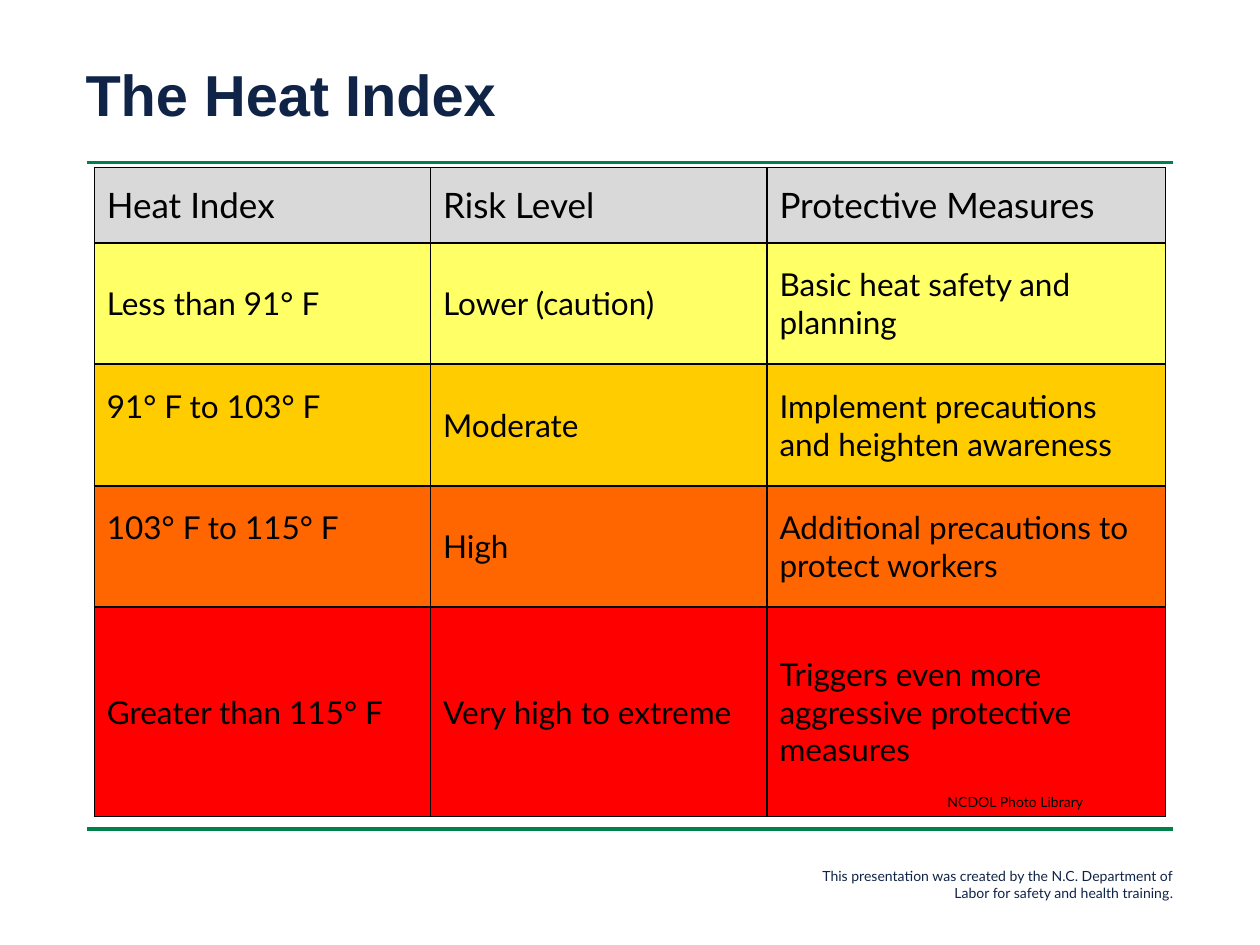
from dataclasses import dataclass

import pptx
import pptx.dml.color
import pptx.enum.shapes
import pptx.enum.text
import pptx.oxml
import pptx.oxml.ns
import pptx.util
from pptx.util import Cm


@dataclass(frozen=True)
class Theme:
    title_font: str = "Arial"
    body_font: str = "Lato"
    navy: str = "102447"
    purple: str = "2B0E62"
    green: str = "00814A"
    black: str = "000000"
    title_size: int = 33
    header_size: int = 20
    cell_size: int = 18
    note_size: int = 8


THEME = Theme()
ALIGN = pptx.enum.text.PP_ALIGN
MIDDLE = pptx.enum.text.MSO_ANCHOR.MIDDLE

COLUMN_WIDTHS = (6.78, 6.78, 8.04)
# Row height, fill colour, cell texts (a line break starts a paragraph)
ROWS = (
    (1.52, "D9D9D9", ("Heat Index", "Risk Level", "Protective Measures")),
    (2.44, "FFFF66", ("Less than 91° F", "Lower (caution)",
                      "Basic heat safety and planning")),
    (2.46, "FFCC00", ("91° F to 103° F", "Moderate",
                      "Implement precautions and heighten awareness")),
    (2.44, "FF6600", ("103° F to 115° F", "High",
                      "Additional precautions to\nprotect workers")),
    (4.22, "FF0000", ("Greater than 115° F", "Very high to extreme",
                      "Triggers even more aggressive protective\nmeasures")),
)
RAISED_CELLS = {(2, 0), (3, 0)}  # text sits one line above the others


def rgb(color):
    return pptx.dml.color.RGBColor.from_string(color)


def add_run(p, text, size, color=THEME.black, font=THEME.body_font, bold=False):
    r = p.add_run()
    r.text = text
    r.font.name = font
    r.font.size = pptx.util.Pt(size)
    r.font.bold = bold
    r.font.color.rgb = rgb(color)


def add_title(s, text):
    sp = s.shapes.title
    sp.left, sp.top, sp.width, sp.height = Cm(1.47), Cm(1.22), Cm(23.06), Cm(1.52)
    tf = sp.text_frame
    tf.vertical_anchor = MIDDLE
    p = tf.paragraphs[0]
    p.alignment = ALIGN.LEFT
    p.line_spacing = 0.9
    add_run(p, text, THEME.title_size, THEME.navy, THEME.title_font, bold=True)


def add_rule(s, y):
    sp = s.shapes.add_connector(pptx.enum.shapes.MSO_CONNECTOR.STRAIGHT,
                                Cm(1.75), Cm(y), Cm(23.65), Cm(y))
    sp.line.color.rgb = rgb(THEME.green)
    sp.line.width = pptx.util.Pt(2)
    pptx.oxml.ns.qn("a:effectLst")
    sp._element.spPr.append(pptx.oxml.parse_xml(
        f'<a:effectLst {pptx.oxml.ns.nsdecls("a")}/>'))


def add_note(s, left, top, width, height, runs, align=ALIGN.LEFT, wrap=True):
    sp = s.shapes.add_textbox(Cm(left), Cm(top), Cm(width), Cm(height))
    tf = sp.text_frame
    tf.word_wrap = wrap
    tf.auto_size = pptx.enum.text.MSO_AUTO_SIZE.SHAPE_TO_FIT_TEXT
    p = tf.paragraphs[0]
    p.alignment = align
    for text, color in runs:
        add_run(p, text, THEME.note_size, color)


def set_borders(cell):
    tc_pr = cell._tc.get_or_add_tcPr()
    for i, side in enumerate(("lnL", "lnR", "lnT", "lnB")):
        tc_pr.insert(i, pptx.oxml.parse_xml(
            f'<a:{side} {pptx.oxml.ns.nsdecls("a")} w="12700"><a:solidFill>'
            f'<a:srgbClr val="{THEME.black}"/></a:solidFill></a:{side}>'))


def fill_cell(cell, text, size, fill):
    cell.fill.solid()
    cell.fill.fore_color.rgb = rgb(fill)
    cell.vertical_anchor = MIDDLE
    tf = cell.text_frame
    for i, line in enumerate(text.split("\n")):
        p = tf.add_paragraph() if i else tf.paragraphs[0]
        add_run(p, line, size)
    set_borders(cell)


def add_risk_table(s):
    table = s.shapes.add_table(len(ROWS), len(COLUMN_WIDTHS), Cm(1.9), Cm(3.38),
                               Cm(sum(COLUMN_WIDTHS)),
                               Cm(sum(row[0] for row in ROWS))).table
    table.first_row = table.horz_banding = False
    for column, width in zip(table.columns, COLUMN_WIDTHS):
        column.width = Cm(width)
    for i, (height, fill, texts) in enumerate(ROWS):
        table.rows[i].height = Cm(height)
        size = THEME.cell_size if i else THEME.header_size
        for j, text in enumerate(texts):
            cell = table.cell(i, j)
            fill_cell(cell, text, size, fill)
            if (i, j) in RAISED_CELLS:
                cell.margin_bottom = Cm(0.9)


def main():
    prs = pptx.Presentation()
    prs.slide_width, prs.slide_height = Cm(25.4), Cm(19.05)
    s = prs.slides.add_slide(prs.slide_layouts[5])

    # Frame: rules and footer
    for y in (3.28, 16.71):
        add_rule(s, y)
    add_note(s, 15.65, 17.37, 8.25, 0.94,
             (("This presentation was created by the N.C. Department of Labor "
               "for safety and health training", THEME.navy),
              (".", THEME.purple)), ALIGN.RIGHT)

    # Content: title, table and credit
    add_title(s, "The Heat Index")
    add_risk_table(s)
    add_note(s, 18.85, 15.88, 3.3, 0.6,
             (("NCDOL Photo Library", THEME.black),), wrap=False)

    prs.save("out.pptx")


if __name__ == "__main__":
    main()
